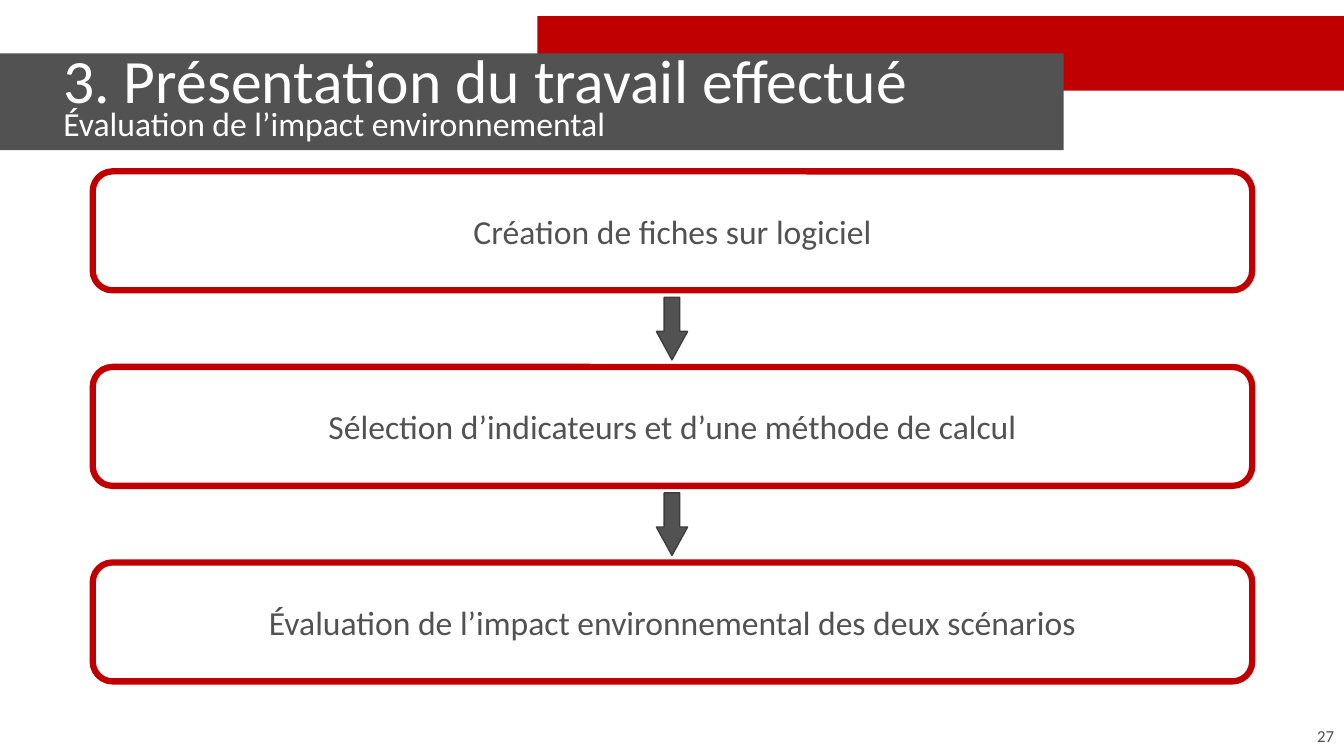
from dataclasses import dataclass

from pptx import Presentation
from pptx.dml.color import RGBColor
from pptx.enum.shapes import MSO_SHAPE as Preset
from pptx.enum.text import MSO_ANCHOR as Anchor, PP_ALIGN as Align
from pptx.util import Emu, Pt

PX = 9144  # 100 px to the inch
FONT = "Calibri"
COLORS = {
    "red": "C00000",
    "grey": "525252",
    "outline": "3D3D3D",
    "white": "FFFFFF",
}


@dataclass(frozen=True)
class Box:
    left: int
    top: int
    width: int
    height: int

    def emu(self) -> tuple:
        return tuple(Emu(n * PX) for n in (self.left, self.top, self.width, self.height))


@dataclass(frozen=True)
class Line:
    text: str
    size: int
    color: str


BANNERS = ((Box(533, 16, 800, 74), "red"), (Box(0, 53, 1055, 96), "grey"))
TITLE = (
    Line("3. Présentation du travail effectué", 44, "white"),
    Line("Évaluation de l’impact environnemental", 24, "white"),
)
STEPS = (
    "Création de fiches sur logiciel",
    "Sélection d’indicateurs et d’une méthode de calcul",
    "Évaluation de l’impact environnemental des deux scénarios",
)
FIRST_STEP = Box(92, 170, 1150, 118)
STEP_PITCH = 194
ARROW_WIDTH, ARROW_HEIGHT, ARROW_GAP = 31, 62, 7


def rgb(name: str) -> RGBColor:
    return RGBColor.from_string(COLORS[name])


def add_preset(slide, preset, box: Box, fill: str = "", line: str = "", width: float = 1):
    shape = slide.shapes.add_shape(preset, *box.emu())
    shape.shadow.inherit = False
    if fill:
        shape.fill.solid()
        shape.fill.fore_color.rgb = rgb(fill)
    else:
        shape.fill.background()
    if line:
        shape.line.color.rgb = rgb(line)
        shape.line.width = Pt(width)
    else:
        shape.line.fill.background()
    return shape


def write(shape, lines: tuple, align, spacing: float = 1.0) -> None:
    frame = shape.text_frame
    frame.word_wrap = True
    frame.vertical_anchor = Anchor.MIDDLE
    paragraph = frame.paragraphs[0]
    paragraph.alignment = align
    paragraph.line_spacing = spacing
    for index, line in enumerate(lines):
        if index:
            paragraph.add_line_break()
        run = paragraph.add_run()
        run.text = line.text
        run.font.name = FONT
        run.font.size = Pt(line.size)
        run.font.color.rgb = rgb(line.color)


def add_step(slide, index: int, text: str) -> None:
    first = FIRST_STEP
    box = Box(first.left, first.top + index * STEP_PITCH, first.width, first.height)
    shape = add_preset(slide, Preset.ROUNDED_RECTANGLE, box, line="red", width=4.5)
    write(shape, (Line(text, 24, "grey"),), Align.CENTER)


def add_arrow(slide, index: int) -> None:
    step = FIRST_STEP
    left = step.left + (step.width - ARROW_WIDTH) // 2
    top = step.top + step.height + ARROW_GAP + index * STEP_PITCH
    box = Box(left, top, ARROW_WIDTH, ARROW_HEIGHT)
    arrow = add_preset(slide, Preset.DOWN_ARROW, box, "grey", "outline")
    arrow.adjustments[1] = 0.91


def main() -> None:
    presentation = Presentation()
    presentation.slide_width = Emu(1333 * PX)
    presentation.slide_height = Emu(750 * PX)
    slide = presentation.slides.add_slide(presentation.slide_layouts[6])

    # Header
    for box, color in BANNERS:
        add_preset(slide, Preset.RECTANGLE, box, color)
    title = slide.shapes.add_textbox(*Box(53, 35, 1003, 132).emu())
    write(title, TITLE, Align.LEFT, 0.7)

    # Steps, with an arrow between each pair
    for index, text in enumerate(STEPS):
        add_step(slide, index, text)
    for index in range(len(STEPS) - 1):
        add_arrow(slide, index)

    # Page number
    number = slide.shapes.add_textbox(*Box(1033, 710, 300, 40).emu())
    write(number, (Line("27", 12, "grey"),), Align.RIGHT)

    presentation.save("out.pptx")


if __name__ == "__main__":
    main()
